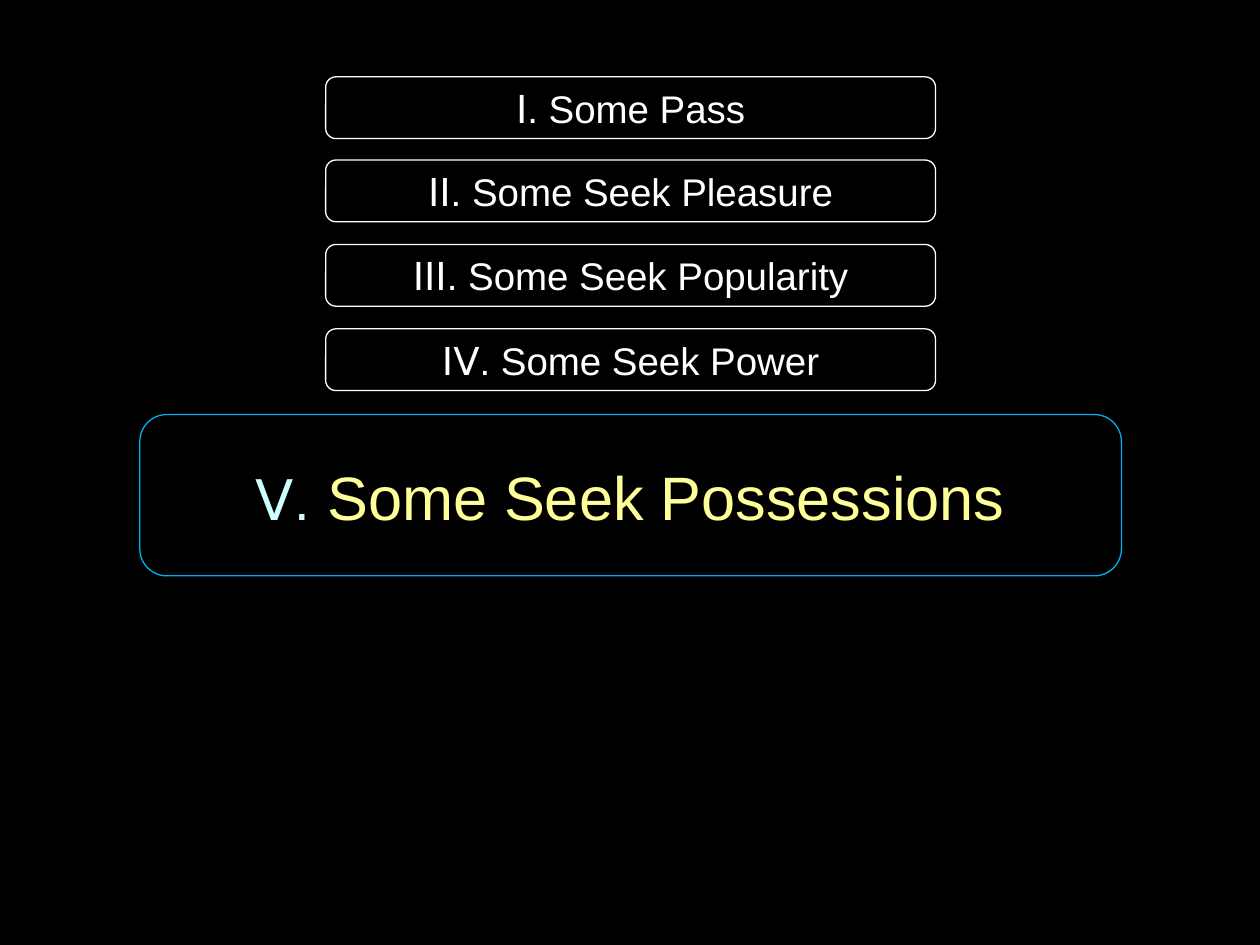
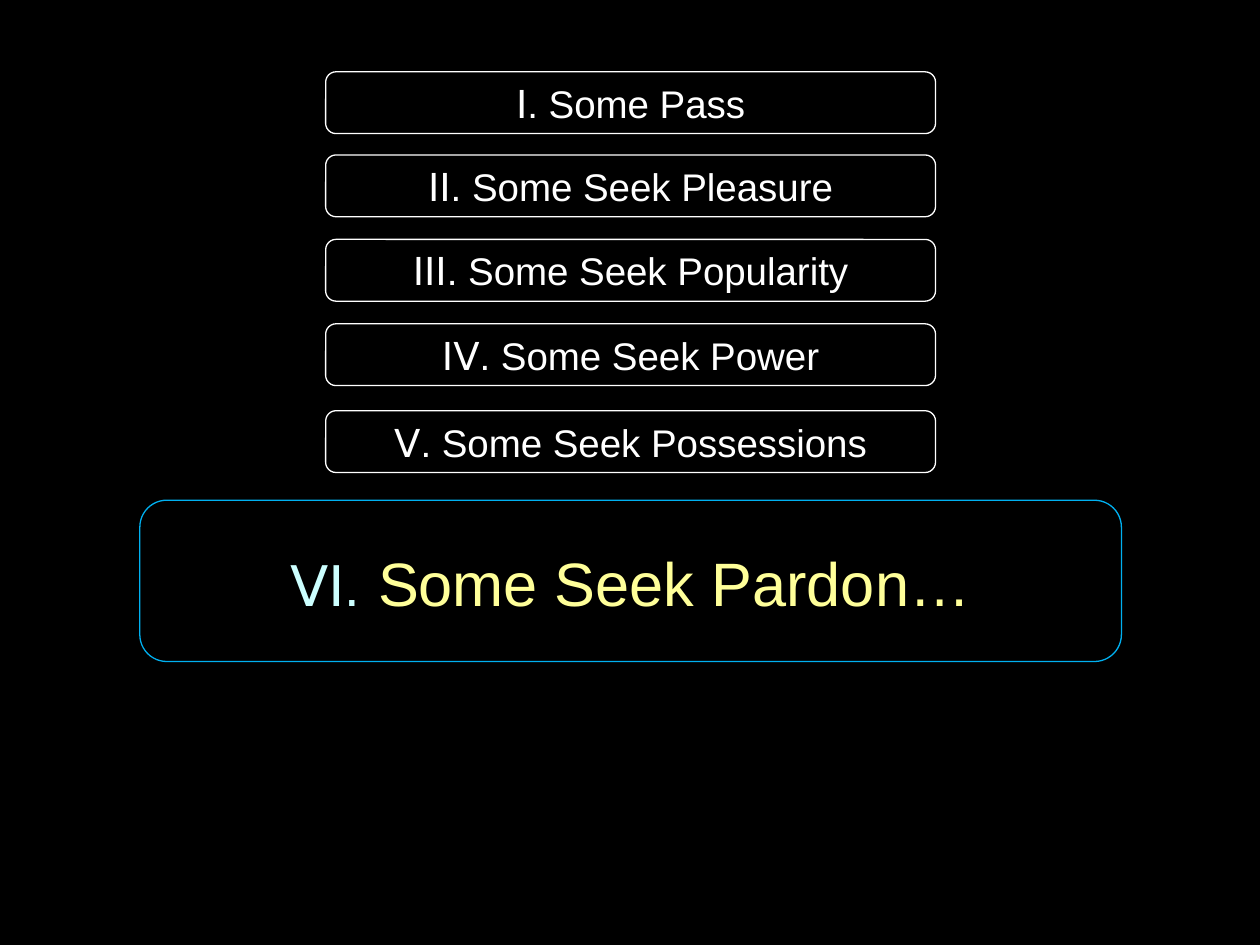
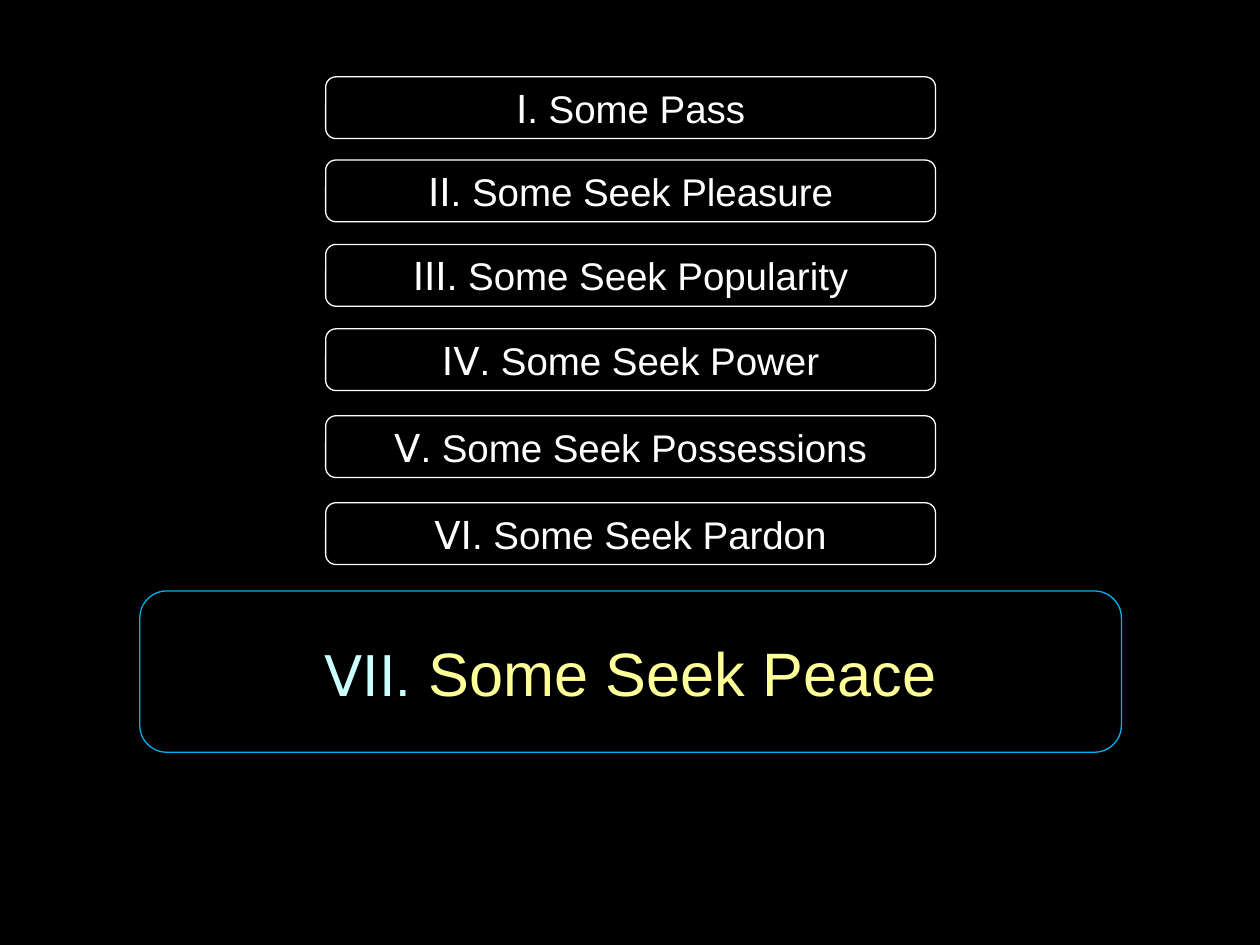
from dataclasses import dataclass
from pptx import Presentation
from pptx.dml.color import RGBColor
from pptx.enum.shapes import MSO_SHAPE
from pptx.enum.text import MSO_ANCHOR, PP_ALIGN
from pptx.util import Inches, Pt


@dataclass(frozen=True)
class Theme:
    back: str = "000000"
    chip: str = "FFFFFF"
    frame: str = "00B0F0"
    numeral: str = "CCFFFF"
    title: str = "FFFF99"
    numeral_font: str = "DejaVu Sans"
    text_font: str = "Arial"
    chip_size: int = 22
    numeral_size: int = 32
    gap_size: int = 36
    title_size: int = 35
    line_width: float = 0.75


COLUMNS, ROWS = 100, 75
NUMERALS = ["I", "II", "III", "IV", "V", "VI", "VII"]
POINTS = ["Some Pass", "Some Seek Pleasure", "Some Seek Popularity", "Some Seek Power",
          "Some Seek Possessions", "Some Seek Pardon", "Some Seek Peace"]
CHIP_OFFSETS = [0, 6.6, 13.3, 20, 26.9, 33.8]


class Deck:
    def __init__(self, theme):
        self.theme = theme
        self.prs = Presentation()
        self.prs.slide_width, self.prs.slide_height = Inches(10), Inches(7.5)
        self.s = None

    def slide(self):
        self.s = self.prs.slides.add_slide(self.prs.slide_layouts[6])
        fill = self.s.background.fill
        fill.solid()
        fill.fore_color.rgb = RGBColor.from_string(self.theme.back)

    def box(self, col, row, cols, rows, line, runs):
        unit_x = self.prs.slide_width / COLUMNS
        unit_y = self.prs.slide_height / ROWS
        sp = self.s.shapes.add_shape(
            MSO_SHAPE.ROUNDED_RECTANGLE, round(col * unit_x), round(row * unit_y),
            round(cols * unit_x), round(rows * unit_y))
        sp.shadow.inherit = False
        sp.fill.solid()
        sp.fill.fore_color.rgb = RGBColor.from_string(self.theme.back)
        sp.line.color.rgb = RGBColor.from_string(line)
        sp.line.width = Pt(self.theme.line_width)
        tf = sp.text_frame
        tf.vertical_anchor = MSO_ANCHOR.MIDDLE
        p = tf.paragraphs[0]
        p.alignment = PP_ALIGN.CENTER
        for text, font, size, color in runs:
            r = p.add_run()
            r.text = text
            r.font.name = font
            r.font.size = Pt(size)
            r.font.color.rgb = RGBColor.from_string(color)

    def chip(self, index, top):
        t = self.theme
        self.box(25.85, top + CHIP_OFFSETS[index], 48.4, 4.9, t.chip, [
            (NUMERALS[index], t.numeral_font, t.chip_size, t.chip),
            (f". {POINTS[index]}", t.text_font, t.chip_size, t.chip)])

    def highlight(self, index, row, ending):
        t = self.theme
        self.box(11.1, row, 77.9, 12.8, t.frame, [
            (NUMERALS[index], t.numeral_font, t.numeral_size, t.numeral),
            (".", t.text_font, t.numeral_size, t.numeral),
            (" ", t.text_font, t.gap_size, t.numeral),
            (POINTS[index] + ending, t.text_font, t.title_size, t.title)])

    def outline(self, current, top, highlight_row, ending=""):
        self.slide()
        for index in range(current):
            self.chip(index, top)
        self.highlight(current, highlight_row, ending)


def main():
    deck = Deck(Theme())
    deck.outline(4, 6.1, 32.9)
    deck.outline(5, 5.7, 39.7, "…")
    deck.outline(6, 6.1, 46.9)
    deck.prs.save("out.pptx")


if __name__ == "__main__":
    main()
